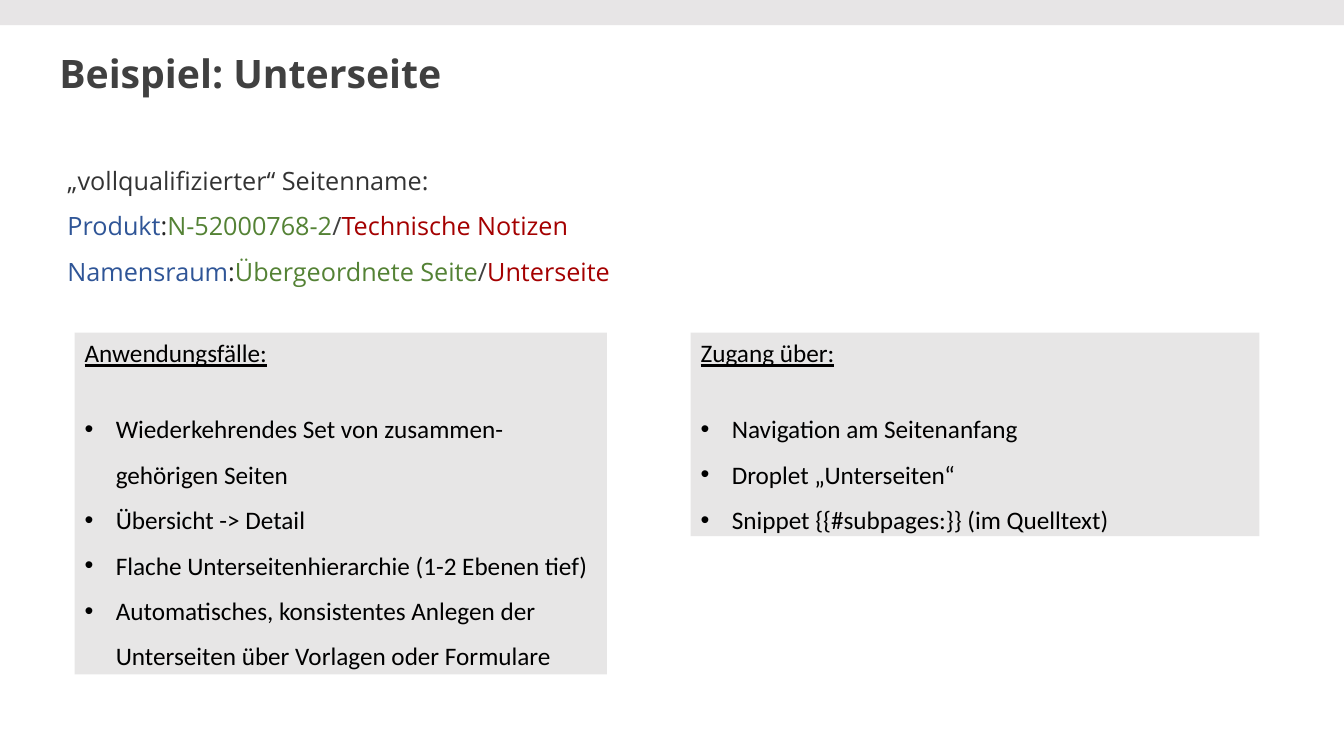
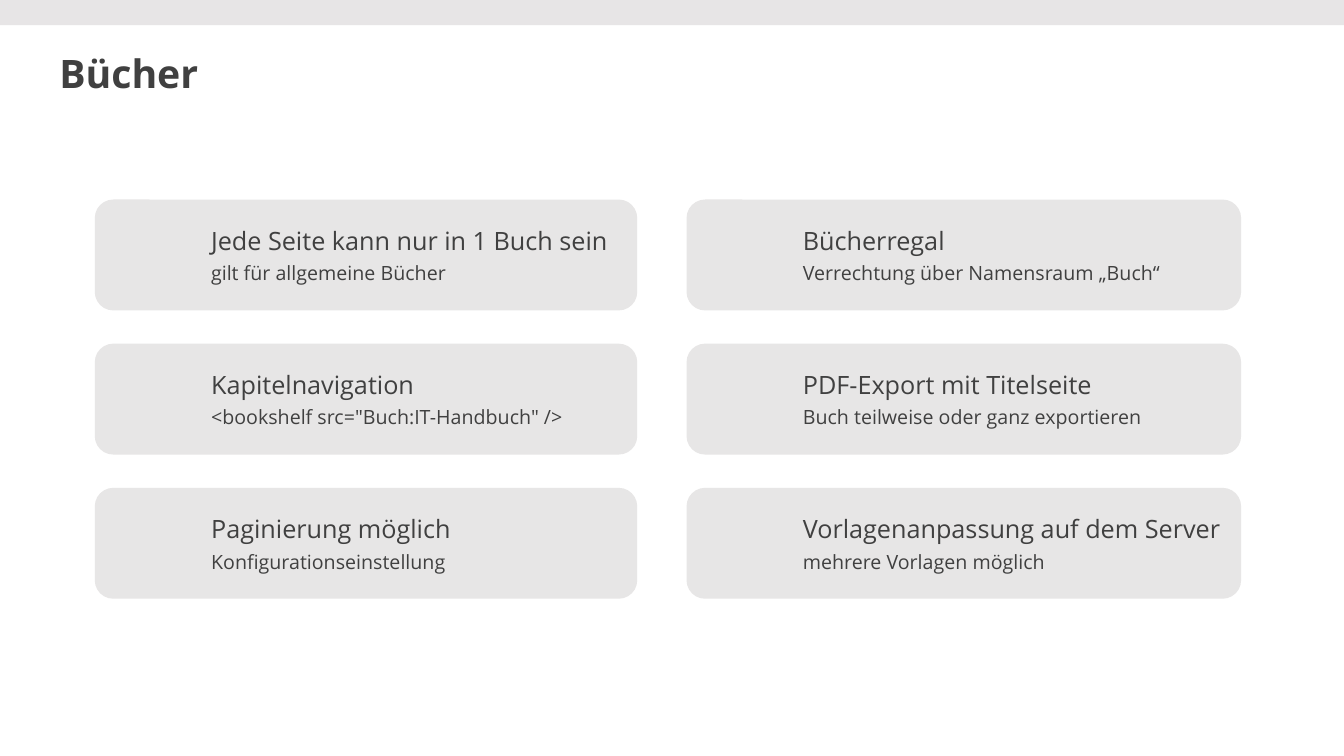
from pptx import Presentation
from pptx.dml.color import RGBColor
from pptx.enum.shapes import MSO_SHAPE
from pptx.enum.text import MSO_ANCHOR, PP_ALIGN
from pptx.oxml.ns import qn
from pptx.util import Pt
from lxml.etree import SubElement

SCALE = 9144
WIDE, HIGH = 1333, 750
BAND, PANEL = "E7E5E6", "E7E6E6"
INK, DARK, SOFT, BLACK = "404040", "262626", "333333", "000000"
BLUE, GREEN, RED = "2F5597", "548235", "A40000"
SANS, BODY = "Open Sans", "Calibri"

LINES = [
    [("„vollqualifizierter“ Seitenname:", SOFT)],
    [("Produkt", BLUE), (":", DARK), ("N-52000768-2", GREEN), ("/", INK),
     ("Technische Notizen", RED)],
    [("Namensraum", BLUE), (":", DARK), ("Übergeordnete Seite", GREEN), ("/", INK),
     ("Unterseite", RED)],
]
USES = [
    "Wiederkehrendes Set von zusammen-gehörigen Seiten",
    "Übersicht -> Detail",
    "Flache Unterseitenhierarchie (1-2 Ebenen tief)",
    "Automatisches, konsistentes Anlegen der Unterseiten über Vorlagen oder Formulare",
]
WAYS = [
    "Navigation am Seitenanfang",
    "Droplet „Unterseiten“",
    "Snippet {{#subpages:}} (im Quelltext)",
]
CARDS = [
    (94, 538, [
        ("Jede Seite kann nur in 1 Buch sein", "gilt für allgemeine Bücher"),
        ("Kapitelnavigation", '<bookshelf src="Buch:IT-Handbuch" />'),
        ("Paginierung möglich", "Konfigurationseinstellung"),
    ]),
    (681, 550, [
        ("Bücherregal", "Verrechtung über Namensraum „Buch“"),
        ("PDF-Export mit Titelseite", "Buch teilweise oder ganz exportieren"),
        ("Vorlagenanpassung auf dem Server", "mehrere Vorlagen möglich"),
    ]),
]


def px(*sizes):
    """Turn px lengths into EMU."""
    return [size * SCALE for size in sizes]


def tint(code):
    """Return the colour of a hex string."""
    return RGBColor.from_string(code)


def write(para, text, size, color, face=SANS, bold=False, line=False):
    """Add one styled run to a paragraph."""
    run = para.add_run()
    run.text = text
    font = run.font
    font.name, font.size = face, Pt(size)
    font.bold, font.underline = bold, line
    font.color.rgb = tint(color)


def start(frame, space=1.0, gap=0):
    """Return the next left-aligned paragraph of a frame."""
    para = frame.add_paragraph() if frame.text else frame.paragraphs[0]
    para.alignment = PP_ALIGN.LEFT
    para.line_spacing = space
    if gap:
        para.space_before = Pt(gap)
    return para


def dot(para):
    """Give a paragraph a hanging bullet."""
    props = para._p.get_or_add_pPr()
    indent, = px(31)
    props.set("marL", str(indent))
    props.set("indent", str(-indent))
    SubElement(props, qn("a:buFont")).set("typeface", "Arial")
    SubElement(props, qn("a:buChar")).set("char", "•")


def label(slide, box, anchor):
    """Add a wrapping text box and return its frame."""
    frame = slide.shapes.add_textbox(*px(*box)).text_frame
    frame.word_wrap = True
    frame.vertical_anchor = anchor
    return frame


def block(slide, box, fill, kind=MSO_SHAPE.RECTANGLE):
    """Add a flat filled shape without outline."""
    shape = slide.shapes.add_shape(kind, *px(*box))
    shape.shadow.inherit = False
    shape.fill.solid()
    shape.fill.fore_color.rgb = tint(fill)
    shape.line.fill.background()
    return shape


def page(deck, title):
    """Add a slide with the top band and a title."""
    slide = deck.slides.add_slide(deck.slide_layouts[6])
    block(slide, (0, 0, WIDE, 25), BAND)
    frame = label(slide, (49, 50, 1062, 51), MSO_ANCHOR.MIDDLE)
    write(start(frame, 0.9), title, 28, INK, bold=True)
    return slide


def panel(slide, box, head, items):
    """Add a grey box with an underlined heading and bullets."""
    frame = block(slide, box, PANEL).text_frame
    frame.word_wrap = True
    frame.vertical_anchor = MSO_ANCHOR.TOP
    write(start(frame), head, 18, BLACK, BODY, line=True)
    for row, item in enumerate(items):
        para = start(frame, 1.5, 0 if row else 22)
        dot(para)
        write(para, item, 18, BLACK, BODY)


def card(slide, box, head, note):
    """Add a rounded card with a heading and a note."""
    frame = block(slide, box, PANEL, MSO_SHAPE.ROUNDED_RECTANGLE).text_frame
    frame.word_wrap = True
    frame.vertical_anchor = MSO_ANCHOR.MIDDLE
    frame.margin_left, = px(110)
    write(start(frame), head, 18, INK)
    write(start(frame, gap=4), note, 14, INK)


def subpage(deck):
    """Build the slide on subpages."""
    slide = page(deck, "Beispiel: Unterseite")
    frame = label(slide, (57, 144, 825, 142), MSO_ANCHOR.TOP)
    for line in LINES:
        para = start(frame, 1.5)
        for text, color in line:
            write(para, text, 18, color)
    panel(slide, (74, 330, 528, 339), "Anwendungsfälle:", USES)
    panel(slide, (685, 330, 564, 202), "Zugang über:", WAYS)


def books(deck):
    """Build the slide on books."""
    slide = page(deck, "Bücher")
    for left, width, cards in CARDS:
        for row, (head, note) in enumerate(cards):
            card(slide, (left, 198 + 143 * row, width, 110), head, note)


def main():
    """Build and save the deck."""
    deck = Presentation()
    deck.slide_width, deck.slide_height = px(WIDE, HIGH)
    subpage(deck)
    books(deck)
    deck.save("out.pptx")


if __name__ == "__main__":
    main()
